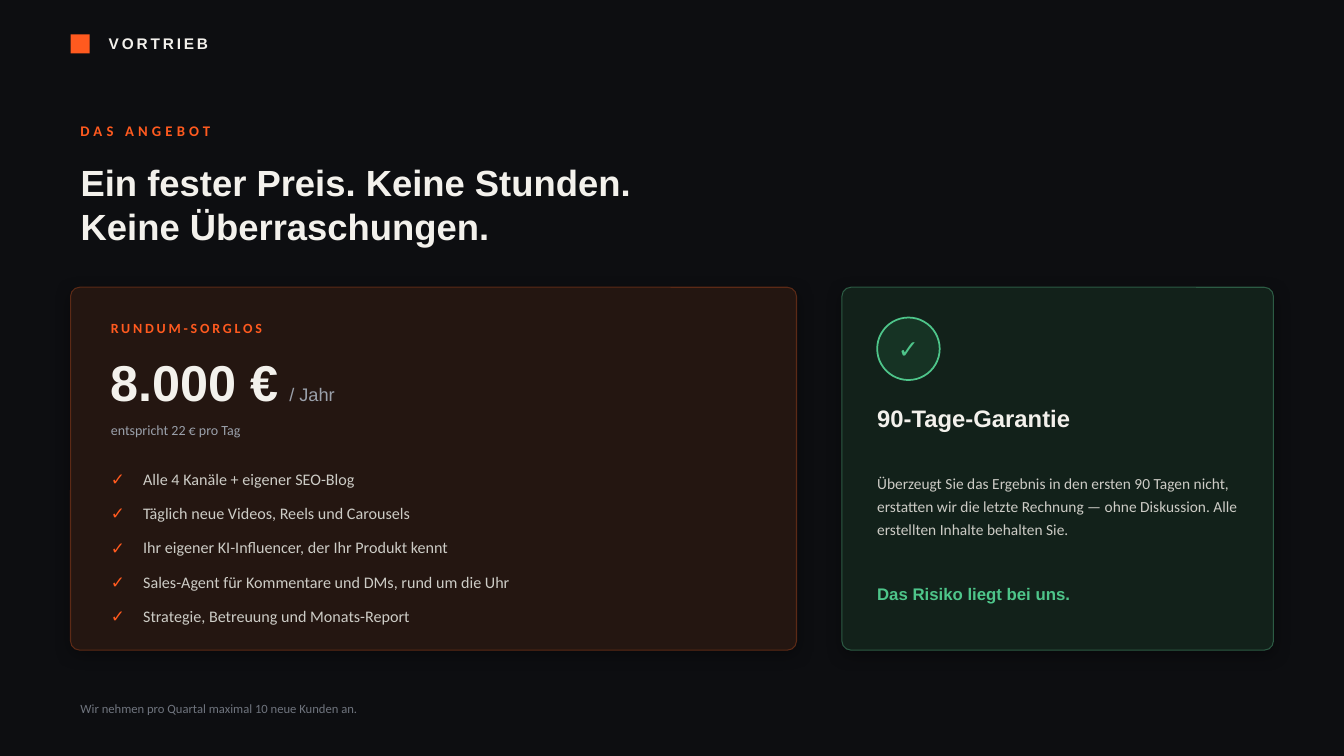
"""Builds the offer slide with its price card and guarantee card."""
from lxml.etree import SubElement
from pptx import Presentation
from pptx.dml.color import RGBColor
from pptx.enum.shapes import MSO_SHAPE
from pptx.enum.text import MSO_ANCHOR, MSO_AUTO_SIZE, PP_ALIGN
from pptx.oxml.ns import qn
from pptx.util import Inches, Pt

HEX = {
    "back": "0D0E11", "accent": "FF5A1F", "light": "F3F1EC", "body": "CDCCC6",
    "grey": "9AA0AA", "faint": "6F747E", "green": "4EC58A", "black": "000000",
    "brown": "241611", "rust": "5C2A16", "pine": "12211A", "moss": "2C5B44",
    "leaf": "163324",
}
HEAD, BODY = "Arial", "Calibri"
CELL = 0.1
PERKS = [
    "Alle 4 Kanäle + eigener SEO-Blog",
    "Täglich neue Videos, Reels und Carousels",
    "Ihr eigener KI-Influencer, der Ihr Produkt kennt",
    "Sales-Agent für Kommentare und DMs, rund um die Uhr",
    "Strategie, Betreuung und Monats-Report",
]


def tint(name):
    return RGBColor.from_string(HEX[name])


def grid(*cells):
    return [Inches(cell * CELL) for cell in cells]


class Deck:
    """Holds the style and the current slide; lengths are grid cells."""

    def __init__(self):
        self.show = Presentation()
        self.show.slide_width, self.show.slide_height = grid(133.3, 75)
        self.slide = self.show.slides.add_slide(self.show.slide_layouts[5])
        fill = self.slide.background.fill
        fill.solid()
        fill.fore_color.rgb = tint("back")

    def style(self, font, face, size, color, bold):
        font.name, font.size, font.bold = face, Pt(size), bold
        font.color.rgb = tint(color)

    def frame(self, shape, flush=True):
        frame = shape.text_frame
        frame.word_wrap = True
        frame.auto_size = MSO_AUTO_SIZE.NONE
        frame.vertical_anchor = MSO_ANCHOR.MIDDLE
        if flush:
            frame.margin_left = frame.margin_right = 0
            frame.margin_top = frame.margin_bottom = 0
        return frame

    def label(self, shape, text, face, size, color, bold=False, track=0,
              flush=True, align=PP_ALIGN.LEFT, lead=None):
        frame = self.frame(shape, flush)
        frame.text = text
        for para in frame.paragraphs:
            para.alignment = align
            if lead:
                para.line_spacing = lead
            self.style(para.font, face, size, color, bold)
            if track:
                para.runs[0]._r.get_or_add_rPr().set("spc", str(track * 100))

    def text(self, area, *args, **opts):
        box = self.slide.shapes.add_textbox(*grid(*area))
        self.label(box, *args, **opts)

    def title(self, area, *args, **opts):
        head = self.slide.shapes.title
        head.left, head.top, head.width, head.height = grid(*area)
        self.label(head, *args, **opts)

    def shape(self, kind, area, fill, line=None, width=0.75):
        item = self.slide.shapes.add_shape(kind, *grid(*area))
        item.shadow.inherit = False
        item.fill.solid()
        item.fill.fore_color.rgb = tint(fill)
        if line:
            item.line.color.rgb = tint(line)
            item.line.width = Pt(width)
        else:
            item.line.fill.background()
        return item

    def card(self, area, fill, line):
        item = self.shape(MSO_SHAPE.ROUNDED_RECTANGLE, area, fill, line)
        item.adjustments[0] = 0.025
        glow = SubElement(
            item._element.spPr.find(qn("a:effectLst")), qn("a:outerShdw"),
            blurRad=str(Pt(12)), dist=str(Pt(3)), dir="5400000",
            algn="bl", rotWithShape="0")
        shade = SubElement(glow, qn("a:srgbClr"), val=HEX["black"])
        SubElement(shade, qn("a:alpha"), val="35000")

    def price(self, area, cost, term, stop):
        box = self.slide.shapes.add_textbox(*grid(*area))
        para = self.frame(box).paragraphs[0]
        tabs = SubElement(para._p.get_or_add_pPr(), qn("a:tabLst"))
        SubElement(tabs, qn("a:tab"), pos=str(grid(stop)[0]), algn="l")
        para.font.name = HEAD
        for part, size, color, bold in ((cost, 36, "light", True),
                                        ("\t" + term, 13, "grey", False)):
            run = para.add_run()
            run.text = part
            self.style(run.font, HEAD, size, color, bold)


def main():
    deck = Deck()
    edge, top, tall = 7, 28.5, 36
    left, right = 11, 87

    deck.shape(MSO_SHAPE.RECTANGLE, (edge, 3.4, 1.9, 1.9), "accent")
    deck.text((9.8, 2.6, 30, 3.4), "VORTRIEB", HEAD, 11, "light", True,
              track=2, flush=False)
    deck.text((edge, 11.5, 80, 3), "DAS ANGEBOT", BODY, 10.5, "accent", True,
              track=3, flush=False)
    deck.title((edge, 15, 80, 10.5),
               "Ein fester Preis. Keine Stunden.\nKeine Überraschungen.",
               HEAD, 26, "light", True, flush=False)

    deck.card((edge, top, 72, tall), "brown", "rust")
    deck.text((left, 31, 40, 3), "RUNDUM-SORGLOS", BODY, 10, "accent", True,
              track=2)
    deck.price((left, 34.2, 50, 7.2), "8.000 €", "/ Jahr", 17.7)
    deck.text((left, 41.2, 40, 2.8), "entspricht 22 € pro Tag", BODY, 10,
              "grey")
    for row, perk in enumerate(PERKS):
        y = 46 + 3.4 * row
        deck.text((left, y, 2.8, 3), "✓", BODY, 12, "accent", True)
        deck.text((left + 3.2, y, 61, 3), perk, BODY, 11.5, "body")

    deck.card((83.5, top, 42.8, tall), "pine", "moss")
    badge = deck.shape(MSO_SHAPE.OVAL, (right, 31.5, 6.2, 6.2), "leaf",
                       "green", 1.25)
    deck.label(badge, "✓", BODY, 18, "green", True, align=PP_ALIGN.CENTER)
    deck.text((right, 39.5, 36, 4), "90-Tage-Garantie", HEAD, 17, "light",
              True)
    deck.text((right, 44, 36, 12),
              "Überzeugt Sie das Ergebnis in den ersten 90 Tagen nicht, "
              "erstatten wir die letzte Rechnung — ohne Diskussion. "
              "Alle erstellten Inhalte behalten Sie.",
              BODY, 11, "body", lead=1.25)
    deck.text((right, 57.2, 36, 3.5), "Das Risiko liegt bei uns.", HEAD, 12,
              "green", True)

    deck.text((edge, 68.8, 119.3, 3),
              "Wir nehmen pro Quartal maximal 10 neue Kunden an.",
              BODY, 9, "faint", flush=False)
    deck.show.save("out.pptx")


if __name__ == "__main__":
    main()
